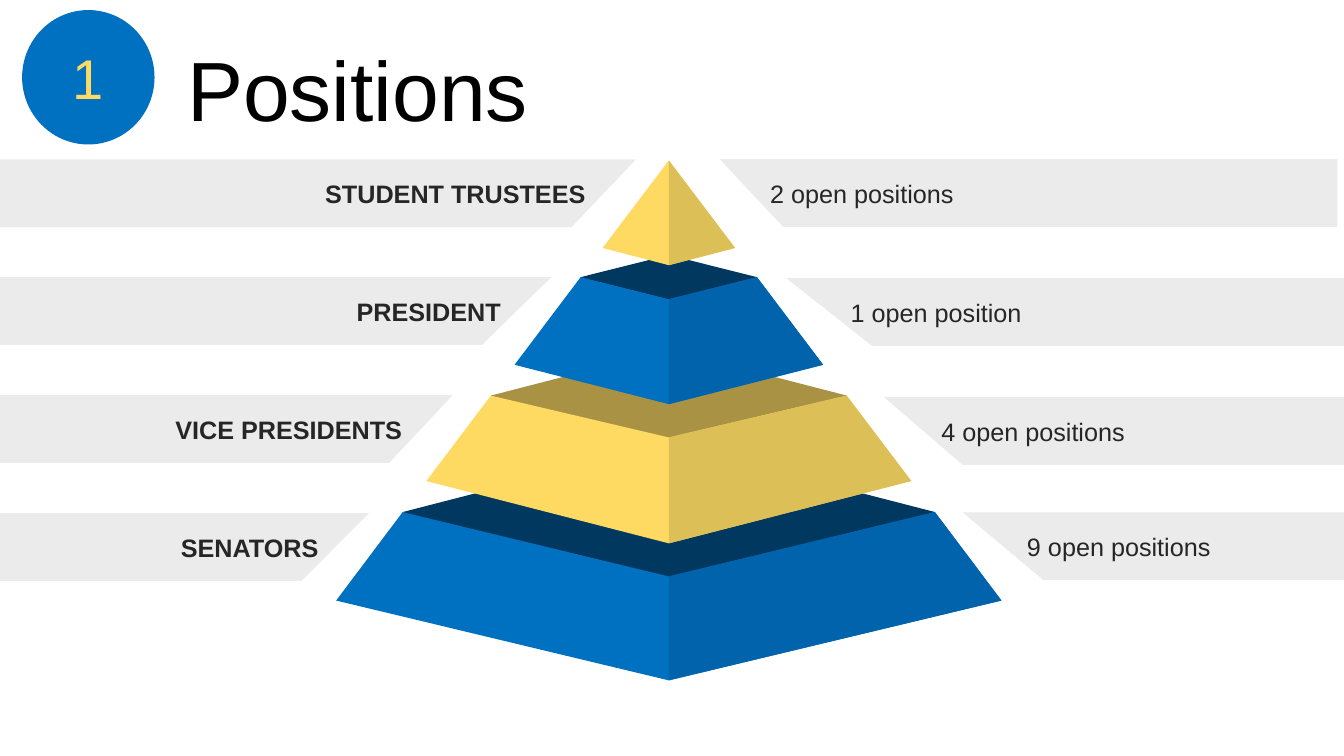
from dataclasses import dataclass

import pptx
import pptx.dml.color
import pptx.enum.shapes
import pptx.enum.text
import pptx.oxml
import pptx.oxml.ns
import pptx.util

Pt = pptx.util.Pt
RGBColor = pptx.dml.color.RGBColor
ALIGN = pptx.enum.text.PP_ALIGN
ANCHOR = pptx.enum.text.MSO_ANCHOR

BLUE = RGBColor(0x00, 0x70, 0xC0)
BLUE_SIDE = RGBColor(0x00, 0x63, 0xAB)
BLUE_LID = RGBColor(0x00, 0x38, 0x60)
GOLD = RGBColor(0xFF, 0xDA, 0x63)
GOLD_SIDE = RGBColor(0xDD, 0xBF, 0x57)
GOLD_LID = RGBColor(0xA9, 0x92, 0x43)
BAND = RGBColor(0xE7, 0xE6, 0xE6)
INK = RGBColor(0x26, 0x26, 0x26)
BLACK = RGBColor(0, 0, 0)

SLIDE_W, SLIDE_H = 960, 540
CENTER_X = 477.75
BAND_H = 48.4


@dataclass
class Tier:
    top: float          # height of the upper corners
    top_half: float     # half width at the upper corners
    base: float         # height of the lower corners
    base_half: float
    ridge_top: float    # front edge, upper and lower end
    ridge_bottom: float
    front: RGBColor
    side: RGBColor


@dataclass
class Lid:
    back: float
    front: float
    color: RGBColor


@dataclass
class Band:
    text: str
    top: float
    outer: float        # straight end, at the slide edge
    upper: float        # slanted end, upper and lower corner
    lower: float
    indent: float = 36


# Top to bottom; the tip has no lid
TIERS = [
    (Tier(114.6, 0, 177.1, 47.3, 114.6, 189.4, GOLD, GOLD_SIDE), None),
    (Tier(198, 63, 260.6, 110.2, 213.8, 288.7, BLUE, BLUE_SIDE),
     Lid(182.2, 272.9, BLUE_LID)),
    (Tier(282.6, 127.1, 343.6, 173.2, 312.5, 388.1, GOLD, GOLD_SIDE),
     Lid(249.8, 367.2, GOLD_LID)),
    (Tier(365.8, 190.1, 429, 237.6, 411.8, 486, BLUE, BLUE_SIDE),
     Lid(316.8, 468, BLUE_LID)),
]

ROLES = [
    Band("STUDENT TRUSTEES", 113.8, 0, 454.3, 408.2),
    Band("PRESIDENT", 198, 0, 393.7, 344.2),
    Band("VICE PRESIDENTS", 282.3, 0, 323.3, 277.9),
    Band("SENATORS", 366.6, 0, 263.5, 215.3),
]
OPENINGS = [
    Band("2 open positions", 113.6, 955.4, 514.1, 559.4),
    Band("1 open position", 198.6, SLIDE_W, 561.6, 622.8, 46),
    Band("4 open positions", 283.6, SLIDE_W, 631.4, 687.6, 41),
    Band("9 open positions", 365.9, SLIDE_W, 687.6, 745.2, 46),
]


def set_style(sp, color: RGBColor) -> None:
    sp.shadow.inherit = False
    sp.fill.solid()
    sp.fill.fore_color.rgb = color
    sp.line.fill.background()


def draw_polygon(shapes, points: list, color: RGBColor):
    # A collapsed edge leaves equal corners, which are kept once
    first, *rest = [(Pt(x), Pt(y)) for x, y in dict.fromkeys(points)]
    builder = shapes.build_freeform(*first)
    builder.add_line_segments(rest, close=True)
    sp = builder.convert_to_shape()
    set_style(sp, color)
    return sp


def write_text(tf, text: str, *, size: float, color: RGBColor, bold: bool = False,
               align=ALIGN.LEFT, anchor=ANCHOR.MIDDLE, wrap: bool = True) -> None:
    tf.word_wrap = wrap
    tf.vertical_anchor = anchor
    p = tf.paragraphs[0]
    p.alignment = align
    r = p.add_run()
    r.text = text
    r.font.name = "Arial"
    r.font.size = Pt(size)
    r.font.bold = bold
    r.font.color.rgb = color


def draw_lid(shapes, tier: Tier, lid: Lid) -> None:
    draw_polygon(shapes, [(CENTER_X, lid.back), (CENTER_X + tier.top_half, tier.top),
                          (CENTER_X, lid.front), (CENTER_X - tier.top_half, tier.top)],
                 lid.color)


def draw_tier(shapes, tier: Tier) -> None:
    ridge = [(CENTER_X, tier.ridge_bottom), (CENTER_X, tier.ridge_top)]
    right = [(CENTER_X + tier.top_half, tier.top), (CENTER_X + tier.base_half, tier.base)]
    left = [(CENTER_X - tier.base_half, tier.base), (CENTER_X - tier.top_half, tier.top)]
    draw_polygon(shapes, right + ridge[:1] + left + ridge[1:], tier.front)
    draw_polygon(shapes, right + ridge, tier.side)


def draw_band(shapes, band: Band, is_role: bool) -> None:
    bottom = band.top + BAND_H
    sp = draw_polygon(shapes, [(band.outer, band.top), (band.upper, band.top),
                               (band.lower, bottom), (band.outer, bottom)], BAND)
    color = sp.fill._xPr.find(".//" + pptx.oxml.ns.qn("a:srgbClr"))
    color.append(pptx.oxml.parse_xml(
        f'<a:alpha {pptx.oxml.ns.nsdecls("a")} val="78000"/>'))
    tf = sp.text_frame
    if is_role:
        tf.margin_right = Pt(band.indent)
    else:
        tf.margin_left = Pt(band.indent)
    write_text(tf, band.text, size=18, color=INK, bold=is_role,
               align=ALIGN.RIGHT if is_role else ALIGN.LEFT)


def main() -> None:
    prs = pptx.Presentation()
    prs.slide_width, prs.slide_height = Pt(SLIDE_W), Pt(SLIDE_H)
    s = prs.slides.add_slide(prs.slide_layouts[6])

    # Pyramid, lids behind the faces
    pyramid = s.shapes.add_group_shape().shapes
    for tier, lid in reversed(TIERS):
        if lid:
            draw_lid(pyramid, tier, lid)
    for tier, _ in reversed(TIERS):
        draw_tier(pyramid, tier)

    # Bands on both sides
    for band in ROLES:
        draw_band(s.shapes, band, True)
    for band in OPENINGS:
        draw_band(s.shapes, band, False)

    # Section number and title
    sp = s.shapes.add_shape(pptx.enum.shapes.MSO_SHAPE.OVAL,
                            Pt(15.8), Pt(7.2), Pt(94.6), Pt(96))
    set_style(sp, BLUE)
    write_text(sp.text_frame, "1", size=40, color=GOLD, align=ALIGN.CENTER)

    title = s.shapes.add_textbox(Pt(126.7), Pt(23), Pt(260.6), Pt(80))
    write_text(title.text_frame, "Positions", size=60, color=BLACK,
               anchor=ANCHOR.TOP, wrap=False)
    title.text_frame.auto_size = pptx.enum.text.MSO_AUTO_SIZE.SHAPE_TO_FIT_TEXT

    prs.save("out.pptx")


if __name__ == "__main__":
    main()
